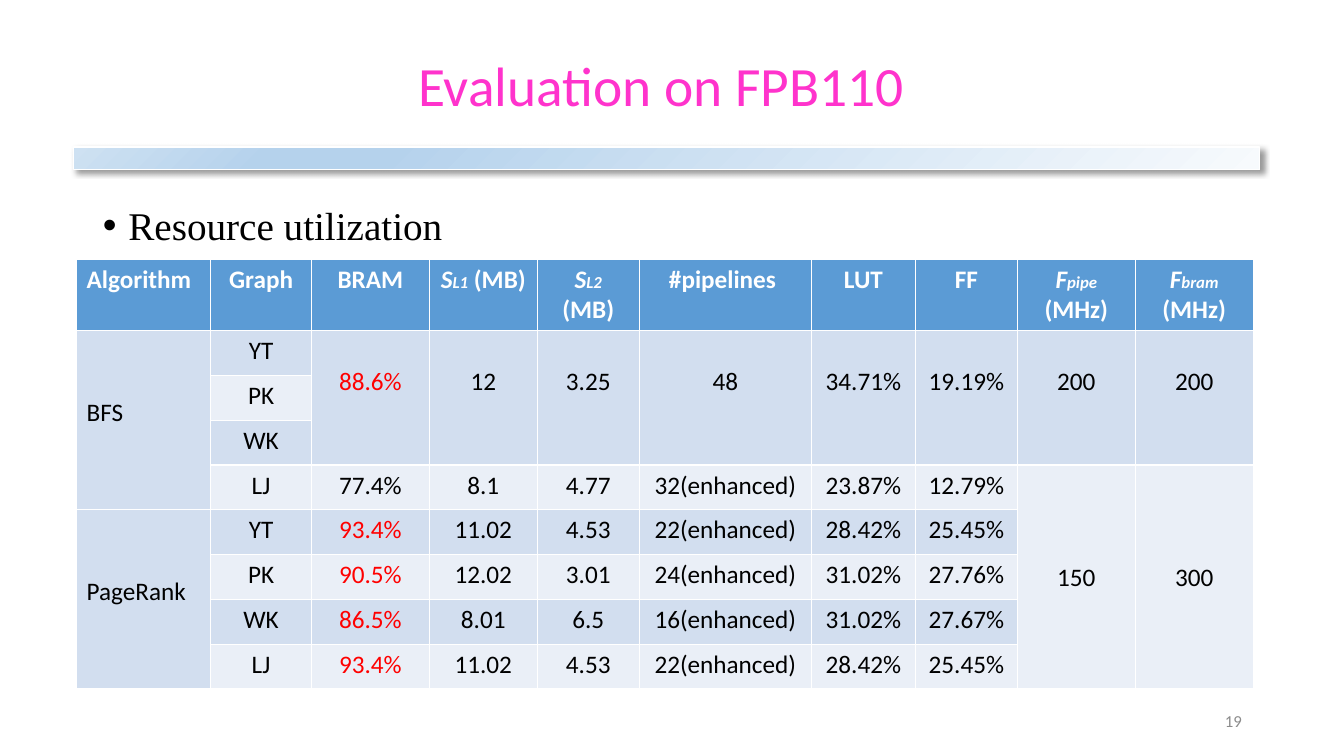
"""Build the resource utilization slide with its table of pipeline results."""
from lxml import etree
from pptx import Presentation
from pptx.dml.color import RGBColor
from pptx.enum import shapes, text
from pptx.oxml import parse_xml
from pptx.oxml.ns import nsdecls
from pptx.util import Cm, Pt

WHITE = RGBColor(0xFF, 0xFF, 0xFF)
BLACK = RGBColor(0x00, 0x00, 0x00)
RED = RGBColor(0xFF, 0x00, 0x00)
PINK = RGBColor(0xFF, 0x33, 0xCC)
GREY = RGBColor(0x8C, 0x8C, 0x8C)
HEADER_BLUE = RGBColor(0x5B, 0x9B, 0xD5)
BAND_DARK = RGBColor(0xD2, 0xDE, 0xEF)
BAND_LIGHT = RGBColor(0xEA, 0xEF, 0xF7)
BAR_EDGE = RGBColor(0xF7, 0xFA, 0xFD)
BAR_MIDDLE = RGBColor(0xB5, 0xD2, 0xEC)
BAR_END = RGBColor(0xCE, 0xE1, 0xF2)


def add_run(paragraph, wording, size, color, font="Calibri", bold=False, italic=False):
    run = paragraph.add_run()
    run.text = wording
    run.font.size = Pt(size)
    run.font.name = font
    run.font.bold = bold
    run.font.italic = italic
    run.font.color.rgb = color


def place(shape, left, top, width, height):
    shape.left, shape.top = Cm(left), Cm(top)
    shape.width, shape.height = Cm(width), Cm(height)


presentation = Presentation()
presentation.slide_width = Cm(33.87)
presentation.slide_height = Cm(19.05)
slide = presentation.slides.add_slide(presentation.slide_layouts[1])

bar = slide.shapes.add_shape(
    shapes.MSO_SHAPE.RECTANGLE, Cm(1.85), Cm(3.71), Cm(29.9), Cm(0.56))
bar.line.color.rgb = WHITE
bar.line.width = Pt(1)
bar.fill.background()
stops = "".join(
    f'<a:gs pos="{position * 1000}"><a:srgbClr val="{color}"/></a:gs>'
    for position, color in [(0, BAR_EDGE), (74, BAR_MIDDLE), (83, BAR_MIDDLE), (100, BAR_END)])
gradient = parse_xml(
    f'<a:gradFill {nsdecls("a")} rotWithShape="1"><a:gsLst>{stops}</a:gsLst>'
    '<a:path path="circle"><a:fillToRect l="100000" t="100000"/></a:path></a:gradFill>')
properties = bar.fill._xPr
properties.replace(properties.find("{*}noFill"), gradient)
bar.shadow.inherit = False
effects = properties.find("{*}effectLst")
effects.append(etree.fromstring(
    f'<a:outerShdw {nsdecls("a")} blurRad="{Pt(4)}" dist="{Pt(3)}" dir="2700000" '
    'algn="tl" rotWithShape="0"><a:srgbClr val="000000"><a:alpha val="40000"/>'
    '</a:srgbClr></a:outerShdw>'))

title = slide.shapes.title
place(title, 4.17, 1.4, 24.97, 1.65)
title.text_frame.vertical_anchor = text.MSO_ANCHOR.MIDDLE
title.text_frame.auto_size = text.MSO_AUTO_SIZE.NONE
paragraph = title.text_frame.paragraphs[0]
paragraph.alignment = text.PP_ALIGN.CENTER
paragraph.line_spacing = 0.9
add_run(paragraph, "Evaluation on FPB110", 39.6, PINK)

body = slide.placeholders[1]
place(body, 2.34, 5.08, 29.21, 12.09)
body.text_frame.auto_size = text.MSO_AUTO_SIZE.NONE
paragraph = body.text_frame.paragraphs[0]
indents = paragraph._p.get_or_add_pPr()
indents.set("marL", str(Cm(0.64)))
indents.set("indent", str(-Cm(0.64)))
indents.append(parse_xml(f'<a:buFont {nsdecls("a")} typeface="Arial"/>'))
indents.append(parse_xml(f'<a:buChar {nsdecls("a")} char="•"/>'))
paragraph.line_spacing = 0.9
paragraph.space_before = Pt(0)
add_run(paragraph, "Resource utilization", 28, BLACK, "Times New Roman")

number_box = slide.shapes.add_textbox(Cm(23.93), Cm(17.65), Cm(7.62), Cm(1.02))
number_box.text_frame.word_wrap = True
number_box.text_frame.vertical_anchor = text.MSO_ANCHOR.MIDDLE
paragraph = number_box.text_frame.paragraphs[0]
paragraph.alignment = text.PP_ALIGN.RIGHT
add_run(paragraph, "19", 12, GREY)

headings = [
    ("Algorithm",), ("Graph",), ("BRAM",), ("S", "L1", " (MB)"), ("S", "L2", " (MB)"),
    ("#pipelines ",), ("LUT",), ("FF",), ("F", "pipe", " (MHz)"), ("F", "bram", " (MHz)")]
results = [
    ["BFS", "YT", "88.6%", "12", "3.25", "48", "34.71%", "19.19%", "200", "200"],
    ["", "PK", "", "", "", "", "", "", "", ""],
    ["", "WK", "", "", "", "", "", "", "", ""],
    ["", "LJ", "77.4%", "8.1", "4.77", "32(enhanced)", "23.87%", "12.79%", "150", "300"],
    ["PageRank", "YT", "93.4%", "11.02", "4.53", "22(enhanced)", "28.42%", "25.45%", "", ""],
    ["", "PK", "90.5%", "12.02", "3.01", "24(enhanced)", "31.02%", "27.76%", "", ""],
    ["", "WK", "86.5%", "8.01", "6.5", "16(enhanced)", "31.02%", "27.67%", "", ""],
    ["", "LJ", "93.4%", "11.02", "4.53", "22(enhanced)", "28.42%", "25.45%", "", ""]]
column_widths = [3.38, 2.54, 2.97, 2.72, 2.57, 4.34, 2.62, 2.57, 2.97, 2.97]
row_heights = [1.8] + [1.13] * len(results)

table = slide.shapes.add_table(
    len(row_heights), len(column_widths), Cm(1.93), Cm(6.53),
    Cm(sum(column_widths)), Cm(sum(row_heights))).table
for column, width in zip(table.columns, column_widths):
    column.width = Cm(width)
for row, height in zip(table.rows, row_heights):
    row.height = Cm(height)

for column_index, heading in enumerate(headings):
    cell = table.cell(0, column_index)
    cell.fill.solid()
    cell.fill.fore_color.rgb = HEADER_BLUE
    paragraph = cell.text_frame.paragraphs[0]
    paragraph.alignment = text.PP_ALIGN.CENTER if column_index else text.PP_ALIGN.LEFT
    for part_index, part in enumerate(heading):
        symbol = len(heading) > 1 and part_index < 2
        add_run(paragraph, part, 12 if part_index == 1 else 18, WHITE, bold=True, italic=symbol)

for row_index, result in enumerate(results, start=1):
    for column_index, value in enumerate(result):
        cell = table.cell(row_index, column_index)
        cell.fill.solid()
        cell.fill.fore_color.rgb = BAND_DARK if row_index % 2 else BAND_LIGHT
        if not value:
            continue
        span = 1
        while row_index + span <= len(results) and not results[row_index + span - 1][column_index]:
            span += 1
        if span > 1:
            cell.merge(table.cell(row_index + span - 1, column_index))
            cell.margin_top = Cm(0.13 + 0.775 * (span - 2))
        paragraph = cell.text_frame.paragraphs[0]
        paragraph.alignment = text.PP_ALIGN.CENTER if column_index else text.PP_ALIGN.LEFT
        nearly_full = column_index == 2 and value > "80%"
        add_run(paragraph, value, 18, RED if nearly_full else BLACK)

presentation.save("out.pptx")
